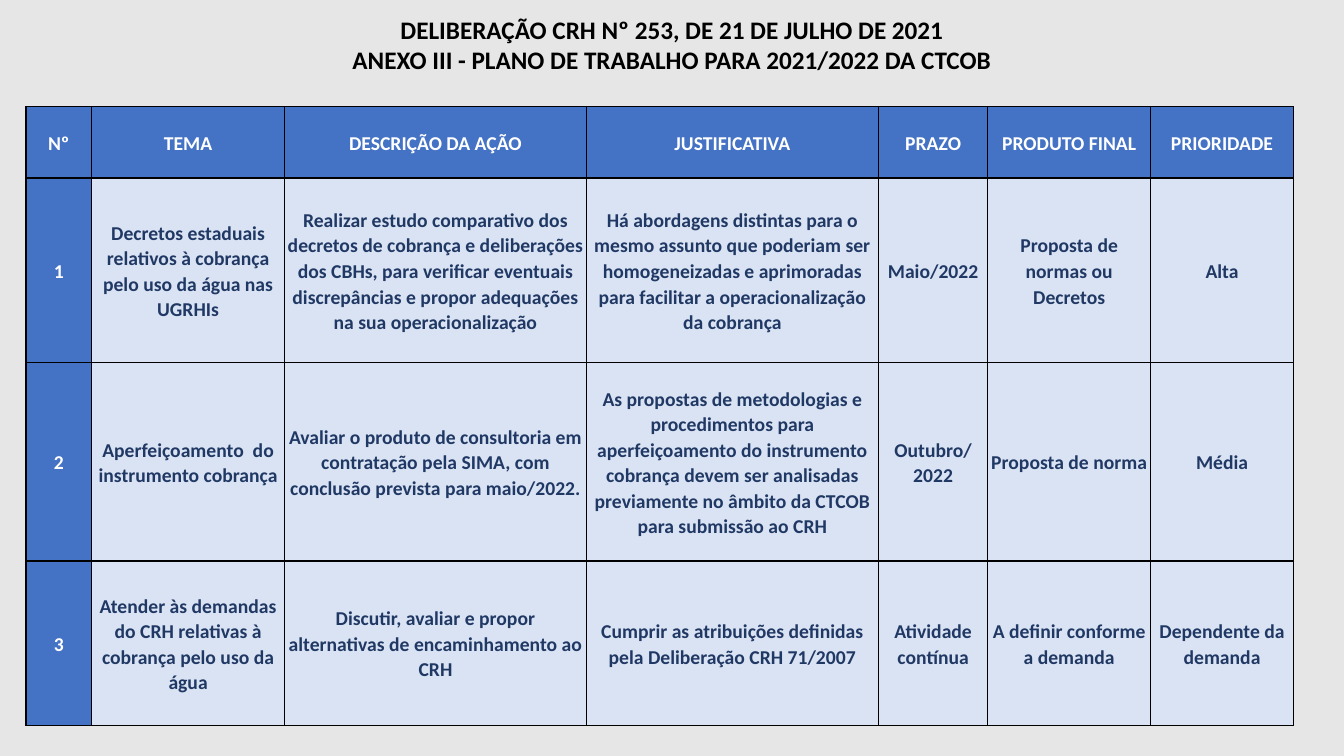
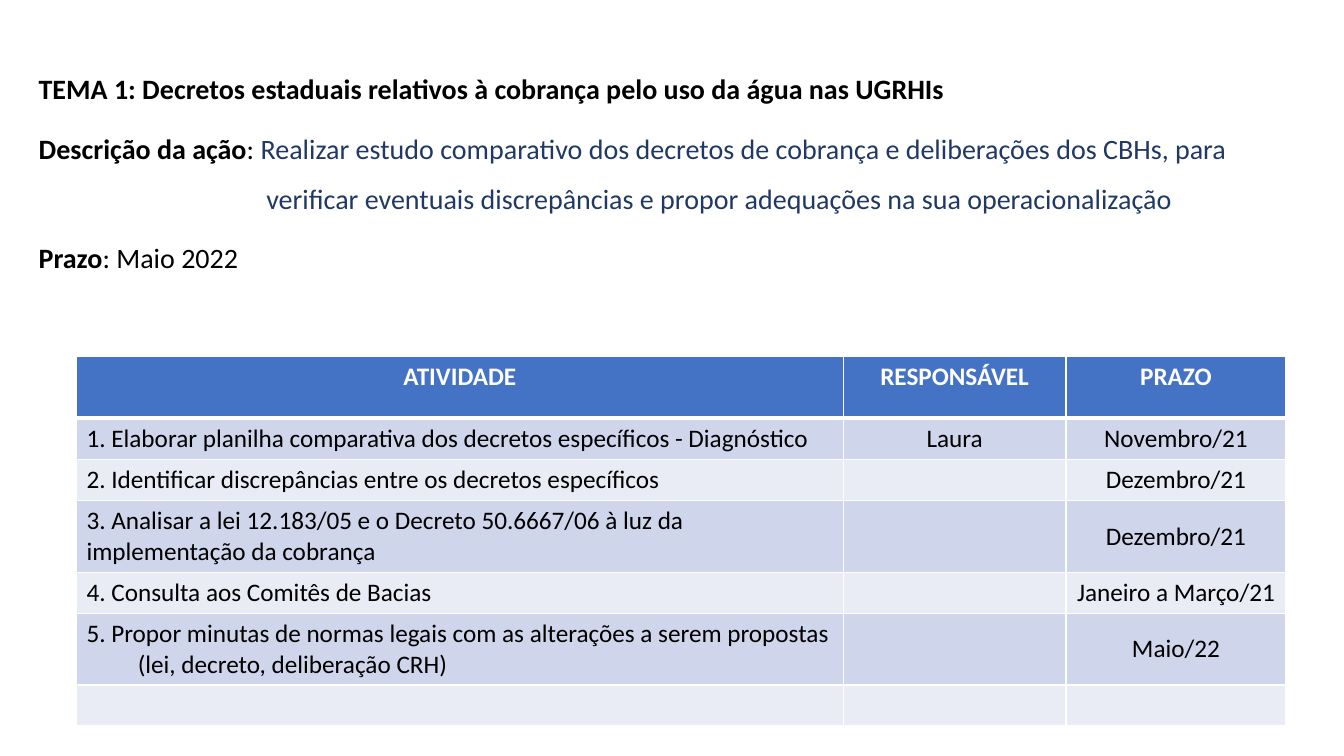
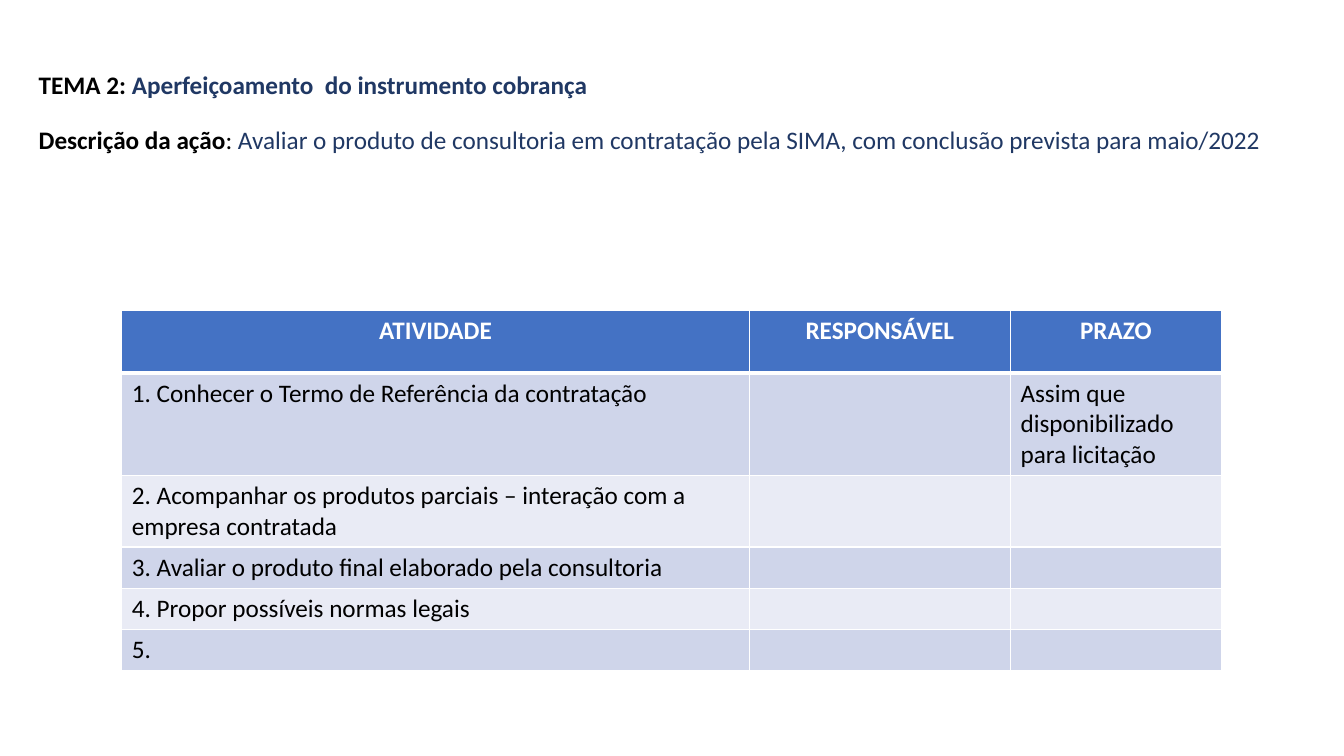
import pptx
import pptx.util
import pptx.dml.color
import pptx.enum.text
import pptx.oxml
import pptx.oxml.ns
from dataclasses import dataclass

Pt = pptx.util.Pt
ALIGN = pptx.enum.text.PP_ALIGN
ANCHOR = pptx.enum.text.MSO_ANCHOR


@dataclass(frozen=True)
class Theme:
    font: str = "Calibri"
    black: str = "000000"
    white: str = "FFFFFF"
    navy: str = "203864"
    blue: str = "4472C4"
    pale: str = "DAE3F3"
    gray: str = "E7E6E6"
    bands: tuple = ("CFD5EA", "E9EBF5")
    small: int = 14
    base: int = 18
    large: int = 20
    leading: float = 1.5
    after: int = 6


T = Theme()

# Grid: 160 columns by 90 rows on a 13.33 x 7.5 inch slide
WIDTH, HEIGHT = pptx.util.Inches(13.33), pptx.util.Inches(7.5)
COLS, ROWS = 160, 90


def col(count):
    return round(WIDTH * count / COLS)


def row(count):
    return round(HEIGHT * count / ROWS)


def rgb(code):
    return pptx.dml.color.RGBColor.from_string(code)


# Text
def add_run(para, text, size, color=T.black, bold=False):
    run = para.add_run()
    run.text = text
    run.font.name = T.font
    run.font.size = Pt(size)
    run.font.bold = bold
    run.font.color.rgb = rgb(color)


def set_para(para, align=ALIGN.LEFT, line=1.0, after=0, left=0, first=0):
    para.alignment = align
    para.line_spacing = line
    para.space_before = Pt(0)
    para.space_after = Pt(after)
    props = para._p.get_or_add_pPr()
    props.set("marL", str(col(left)))
    props.set("indent", str(col(first)))
    props.append(pptx.oxml.parse_xml(
        f"<a:buNone {pptx.oxml.ns.nsdecls('a')}/>"))


def fill_text(frame, paras, size, **style):
    """Each paragraph is a list of (text, color, bold) runs."""
    for num, runs in enumerate(paras):
        para = frame.add_paragraph() if num else frame.paragraphs[0]
        set_para(para, **style)
        for text, color, bold in runs:
            add_run(para, text, size, color, bold)


def place(shape, left, top, width, height, anchor=ANCHOR.TOP):
    shape.left, shape.top = col(left), row(top)
    shape.width, shape.height = col(width), row(height)
    frame = shape.text_frame
    frame.word_wrap = True
    frame.auto_size = pptx.enum.text.MSO_AUTO_SIZE.NONE
    frame.vertical_anchor = anchor
    return frame


# Tables
def set_edges(cell, color, widths):
    props = cell._tc.get_or_add_tcPr()
    for side, width in zip("LRTB", widths):
        props.append(pptx.oxml.parse_xml(
            f'<a:ln{side} {pptx.oxml.ns.nsdecls("a")} w="{Pt(width)}">'
            f'<a:solidFill><a:srgbClr val="{color}"/></a:solidFill>'
            f"</a:ln{side}>"))


def paint(cell, fill, edge, base=1):
    set_edges(cell, edge, (1, 1, 1, base))
    cell.fill.solid()
    cell.fill.fore_color.rgb = rgb(fill)


def add_table(slide, left, top, widths, heights):
    frame = slide.shapes.add_table(
        len(heights), len(widths), col(left), row(top),
        col(sum(widths)), row(sum(heights)))
    table = frame.table
    table.first_row = table.horz_banding = False
    for item, width in zip(table.columns, widths):
        item.width = col(width)
    for item, height in zip(table.rows, heights):
        item.height = row(height)
    return table


def plan_table(slide, data):
    table = add_table(slide, 3.1, 12.7,
                      [7.8, 23, 35.9, 34.8, 13, 19.4, 17],
                      [8.5, 22, 23.6, 19.6])
    for r, line in enumerate(data):
        for c, text in enumerate(line):
            cell = table.cell(r, c)
            head = r == 0 or c == 0
            paint(cell, T.blue if head else T.pale, T.black)
            cell.vertical_anchor = ANCHOR.MIDDLE
            cell.margin_left = cell.margin_right = cell.margin_top = Pt(0.7)
            cell.margin_bottom = 0
            fill_text(cell.text_frame,
                      [[(text, T.white if head else T.navy, True)]],
                      T.small, align=ALIGN.CENTER, line=1.07, after=8)


def task_table(slide, left, top, widths, data, center):
    heights = [7.4] + [4.9] * (len(data) - 1) + [4.7]
    table = add_table(slide, left, top, widths, heights)
    for c, text in enumerate(("ATIVIDADE", "RESPONSÁVEL", "PRAZO")):
        cell = table.cell(0, c)
        paint(cell, T.blue, T.white, base=3)
        fill_text(cell.text_frame, [[(text, T.white, True)]], T.base,
                  align=ALIGN.CENTER)
    for r, line in enumerate(data, 1):
        for c, text in enumerate(line):
            cell = table.cell(r, c)
            paint(cell, T.bands[(r - 1) % 2], T.white)
            mid = center and c > 0
            cell.vertical_anchor = ANCHOR.MIDDLE if mid else ANCHOR.TOP
            paras = [[(part, T.black, False)]
                     for part in text.split("\n") if part]
            fill_text(cell.text_frame, paras, T.base,
                      align=ALIGN.CENTER if mid else ALIGN.LEFT)
            for extra in cell.text_frame.paragraphs[1:]:
                extra._p.get_or_add_pPr().set("marL", str(col(6.1)))


# Slides
def plan_slide(deck, title, data):
    slide = deck.slides.add_slide(deck.slide_layouts[5])
    slide.background.fill.solid()
    slide.background.fill.fore_color.rgb = rgb(T.gray)
    frame = place(slide.shapes.title, 0, 1, COLS, 8.5, ANCHOR.MIDDLE)
    fill_text(frame, [[(text, T.black, True)] for text in title], T.base,
              align=ALIGN.CENTER)
    plan_table(slide, data)


def task_slide(deck, size, height, title, notes, **table):
    slide = deck.slides.add_slide(deck.slide_layouts[1])
    left, top, width = 3.4, 5.9, 153.1
    step = round(size * 0.305 + 1, 2)  # one title line and the gap below
    style = dict(line=T.leading, after=T.after)
    frame = place(slide.shapes.title, left, top, width, step)
    fill_text(frame, [title], size, **style)
    frame = place(slide.placeholders[1], left, top + step, width,
                  height - step)
    fill_text(frame, notes, size, left=27.1, first=-27.1, **style)
    task_table(slide, **table)


def note(label, text, color):
    return [(label, T.black, True), (": ", T.black, False),
            (text, color, False)]


def main():
    deck = pptx.Presentation()
    deck.slide_width, deck.slide_height = WIDTH, HEIGHT

    # Work plan
    plan_slide(deck, [
        "DELIBERAÇÃO CRH Nº 253, DE 21 DE JULHO DE 2021",
        "ANEXO III - PLANO DE TRABALHO PARA 2021/2022 DA CTCOB",
    ], [
        ("Nº", "TEMA", "DESCRIÇÃO DA AÇÃO", "JUSTIFICATIVA", "PRAZO",
         "PRODUTO FINAL", "PRIORIDADE"),
        ("1",
         "Decretos estaduais relativos à cobrança pelo uso da água nas "
         "UGRHIs",
         "Realizar estudo comparativo dos decretos de cobrança e "
         "deliberações dos CBHs, para verificar eventuais discrepâncias e "
         "propor adequações na sua operacionalização",
         "Há abordagens distintas para o mesmo assunto que poderiam ser "
         "homogeneizadas e aprimoradas para facilitar a "
         "operacionalização da cobrança",
         "Maio/2022", "Proposta de normas ou Decretos", "Alta"),
        ("2",
         "Aperfeiçoamento  do instrumento cobrança",
         "Avaliar o produto de consultoria em contratação pela SIMA, com "
         "conclusão prevista para maio/2022.",
         "As propostas de metodologias e procedimentos para "
         "aperfeiçoamento do instrumento cobrança devem ser analisadas "
         "previamente no âmbito da CTCOB para submissão ao CRH",
         "Outubro/ 2022", "Proposta de norma", "Média"),
        ("3",
         "Atender às demandas do CRH relativas à cobrança pelo uso da água",
         "Discutir, avaliar e propor alternativas de encaminhamento ao CRH",
         "Cumprir as atribuições definidas pela Deliberação CRH 71/2007",
         "Atividade contínua", "A definir conforme a demanda",
         "Dependente da demanda"),
    ])

    # Theme 1
    task_slide(
        deck, T.large, 26.9,
        [("TEMA 1: Decretos estaduais relativos à cobrança pelo uso da água "
          "nas UGRHIs", T.black, True)],
        [note("Descrição da ação",
              "Realizar estudo comparativo dos decretos de cobrança e "
              "deliberações dos CBHs, para verificar eventuais "
              "discrepâncias e propor adequações na sua "
              "operacionalização", T.navy),
         note("Prazo", "Maio 2022", T.black)],
        left=9.1, top=42.4, widths=[91.3, 26.5, 26.2], center=True,
        data=[
            ("1. Elaborar planilha comparativa dos decretos específicos - "
             "Diagnóstico", "Laura", "Novembro/21"),
            ("2. Identificar discrepâncias entre os decretos específicos",
             "", "Dezembro/21"),
            ("3. Analisar a lei 12.183/05 e o Decreto 50.6667/06 à luz da "
             "implementação da cobrança", "", "Dezembro/21"),
            ("4. Consulta aos Comitês de Bacias", "", "Janeiro a Março/21"),
            ("5. Propor minutas de normas legais com as alterações a serem "
             "propostas\n(lei, decreto, deliberação CRH)", "", "Maio/22"),
            ("", "", ""),
        ])

    # Theme 2
    task_slide(
        deck, T.base, 12.6,
        [("TEMA 2: ", T.black, True),
         ("Aperfeiçoamento  do instrumento cobrança", T.navy, True)],
        [note("Descrição da ação",
              "Avaliar o produto de consultoria em contratação pela SIMA, "
              "com conclusão prevista para maio/2022", T.navy)],
        left=14.5, top=37, widths=[74.7, 31.1, 25.1], center=False,
        data=[
            ("1. Conhecer o Termo de Referência da contratação", "",
             "Assim que disponibilizado para licitação"),
            ("2. Acompanhar os produtos parciais – interação com a empresa "
             "contratada", "", ""),
            ("3. Avaliar o produto final elaborado pela consultoria", "", ""),
            ("4. Propor possíveis normas legais", "", ""),
            ("5.", "", ""),
        ])

    deck.save("out.pptx")


if __name__ == "__main__":
    main()
